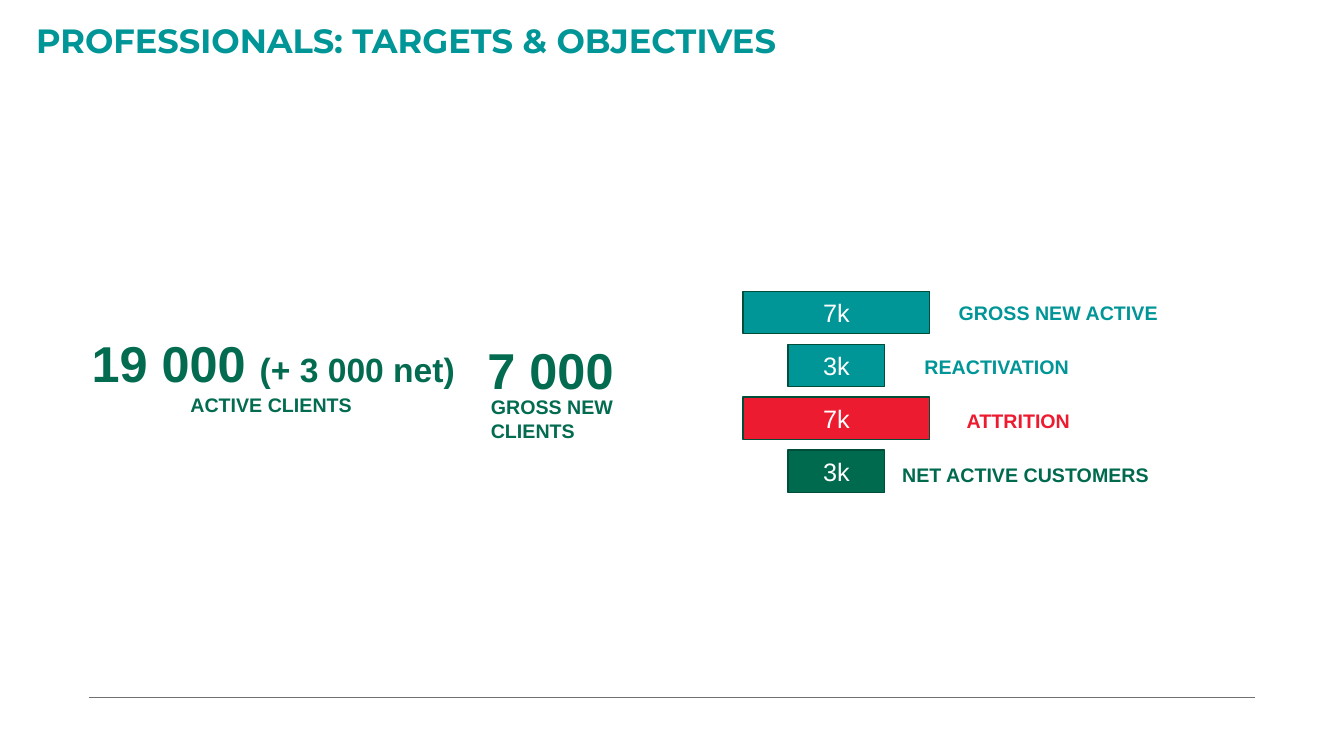
from pptx import Presentation
from pptx.dml.color import RGBColor
from pptx.enum.shapes import MSO_CONNECTOR as Connector, MSO_SHAPE as Shape
from pptx.enum.text import MSO_ANCHOR as Anchor, PP_ALIGN as Align
from pptx.oxml.ns import qn
from pptx.util import Inches, Pt
from lxml.etree import SubElement

COLORS = {
    "teal": "009597",
    "red": "ED1B2F",
    "green": "006A4E",
    "figure": "026B50",
    "outline": "004E3A",
    "rule": "707173",
    "white": "FFFFFF",
}


def rgb(name):
    return RGBColor.from_string(COLORS[name])


class SlideBuilder:
    cell = 0.1
    body_font = "Arial"
    title_font = "Montserrat"
    label_size = 14

    def __init__(self, presentation):
        self.slide = presentation.slides.add_slide(presentation.slide_layouts[6])

    def grid(self, *cells):
        return [Inches(count * self.cell) for count in cells]

    def style(self, paragraph, size, color, bold=True, font=None):
        paragraph.font.name = font or self.body_font
        paragraph.font.size = Pt(size)
        paragraph.font.bold = bold
        paragraph.font.color.rgb = rgb(color)

    def text(self, box, words, size, color, wrap=False, anchor=Anchor.TOP, font=None):
        shape = self.slide.shapes.add_textbox(*self.grid(*box))
        frame = shape.text_frame
        frame.word_wrap = wrap
        frame.vertical_anchor = anchor
        paragraph = frame.paragraphs[0]
        paragraph.text = words
        self.style(paragraph, size, color, font=font)
        return paragraph

    def title(self, box, words):
        paragraph = self.text(box, words, 24, "teal", True, Anchor.MIDDLE, self.title_font)
        paragraph.line_spacing = 0.85

    def label(self, box, words, color, wrap=False):
        self.text(box, words, self.label_size, color, wrap)

    def figure(self, box, number, detail=""):
        paragraph = self.text(box, number, 36, "figure", anchor=Anchor.MIDDLE)
        paragraph.alignment = Align.CENTER
        if detail:
            run = paragraph.add_run()
            run.text = detail
            run.font.size = Pt(24)

    def bar(self, box, value, color):
        shape = self.slide.shapes.add_shape(Shape.RECTANGLE, *self.grid(*box))
        shape.shadow.inherit = False
        shape.fill.solid()
        shape.fill.fore_color.rgb = rgb(color)
        shape.line.color.rgb = rgb("outline")
        shape.line.width = Pt(1)
        shape.text_frame.vertical_anchor = Anchor.MIDDLE
        paragraph = shape.text_frame.paragraphs[0]
        paragraph.text = value
        paragraph.alignment = Align.CENTER
        self.style(paragraph, 18, "white", bold=False)

    def rule(self, left, right, row):
        ends = self.grid(left, row, right, row)
        line = self.slide.shapes.add_connector(Connector.STRAIGHT, *ends)
        line.line.color.rgb = rgb("rule")
        line.line.width = Pt(0.5)
        SubElement(line._element.spPr, qn("a:effectLst"))

    def funnel(self, center, top, pitch, height, stages):
        for index, (value, width, color, name, left, label_width) in enumerate(stages):
            row = top + index * pitch
            self.bar((center - width / 2, row, width, height), value, color)
            label_row = row + 0.5 + index * 0.1
            self.label((left, label_row, label_width, 3.4), name, color)


def main():
    presentation = Presentation()
    presentation.slide_width = Inches(13.33)
    presentation.slide_height = Inches(7.5)

    builder = SlideBuilder(presentation)
    builder.rule(8.8, 124.5, 69.2)
    builder.title((2.6, 2.1, 125.4, 4.3), "PROFESSIONALS: TARGETS & OBJECTIVES")

    builder.figure((7.7, 33.8, 38.8, 4.2), "19 000 ", "(+ 3 000 net)")
    builder.label((17.9, 38.5, 20.7, 3.4), "ACTIVE CLIENTS", "figure")
    builder.figure((41, 34.5, 27.2, 4.2), "7 000")
    builder.label((47.7, 38.7, 19.3, 5.7), "GROSS NEW CLIENTS", "figure", wrap=True)

    wide, narrow = 18.5, 9.6
    builder.funnel(82.95, 28.9, 5.25, 4.2, [
        ("7k", wide, "teal", "GROSS NEW ACTIVE", 94.1, 21.8),
        ("3k", narrow, "teal", "REACTIVATION", 90.7, 16.6),
        ("7k", wide, "red", "ATTRITION", 94.9, 12.3),
        ("3k", narrow, "green", "NET ACTIVE CUSTOMERS", 88.5, 26.6),
    ])
    presentation.save("out.pptx")


if __name__ == "__main__":
    main()
